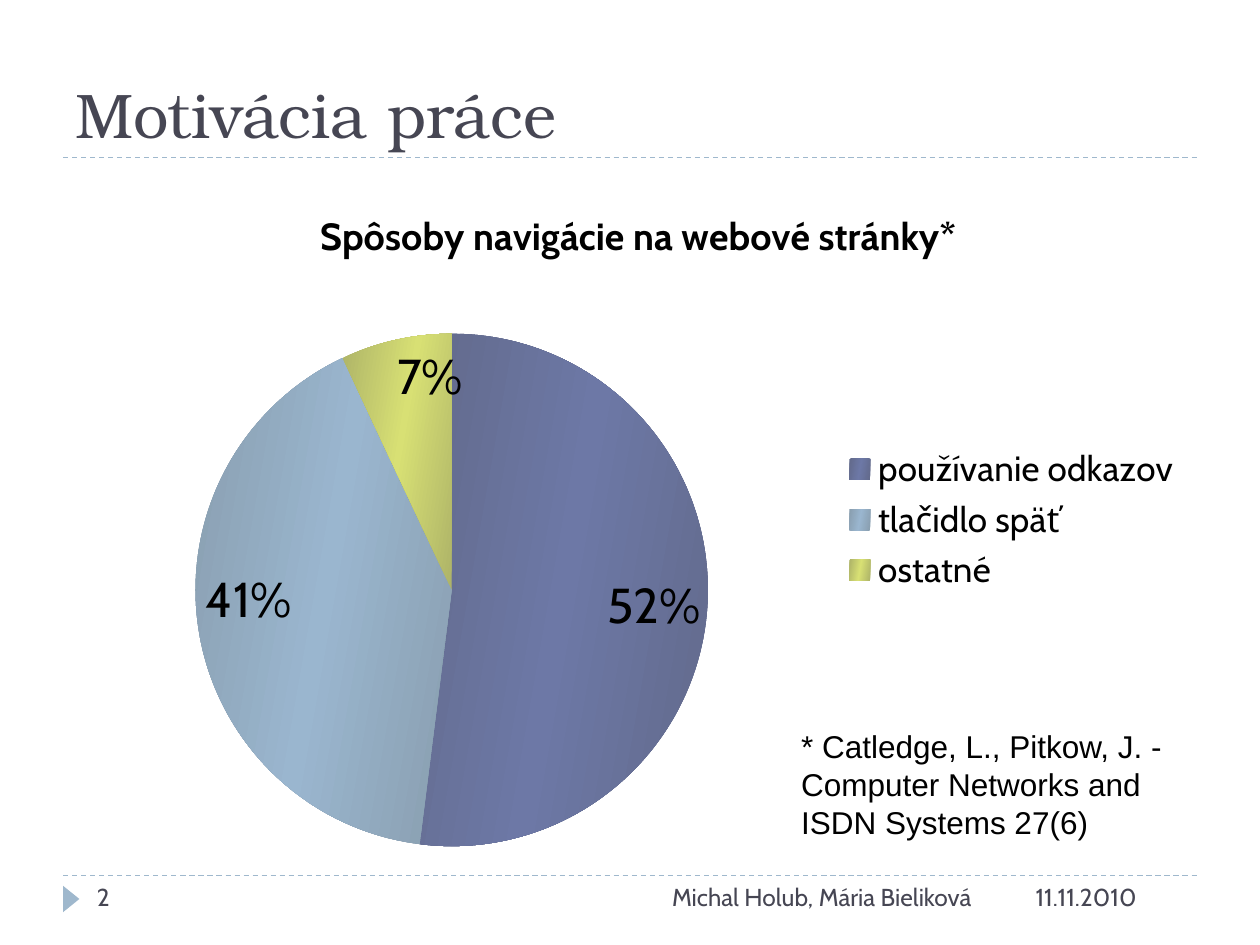
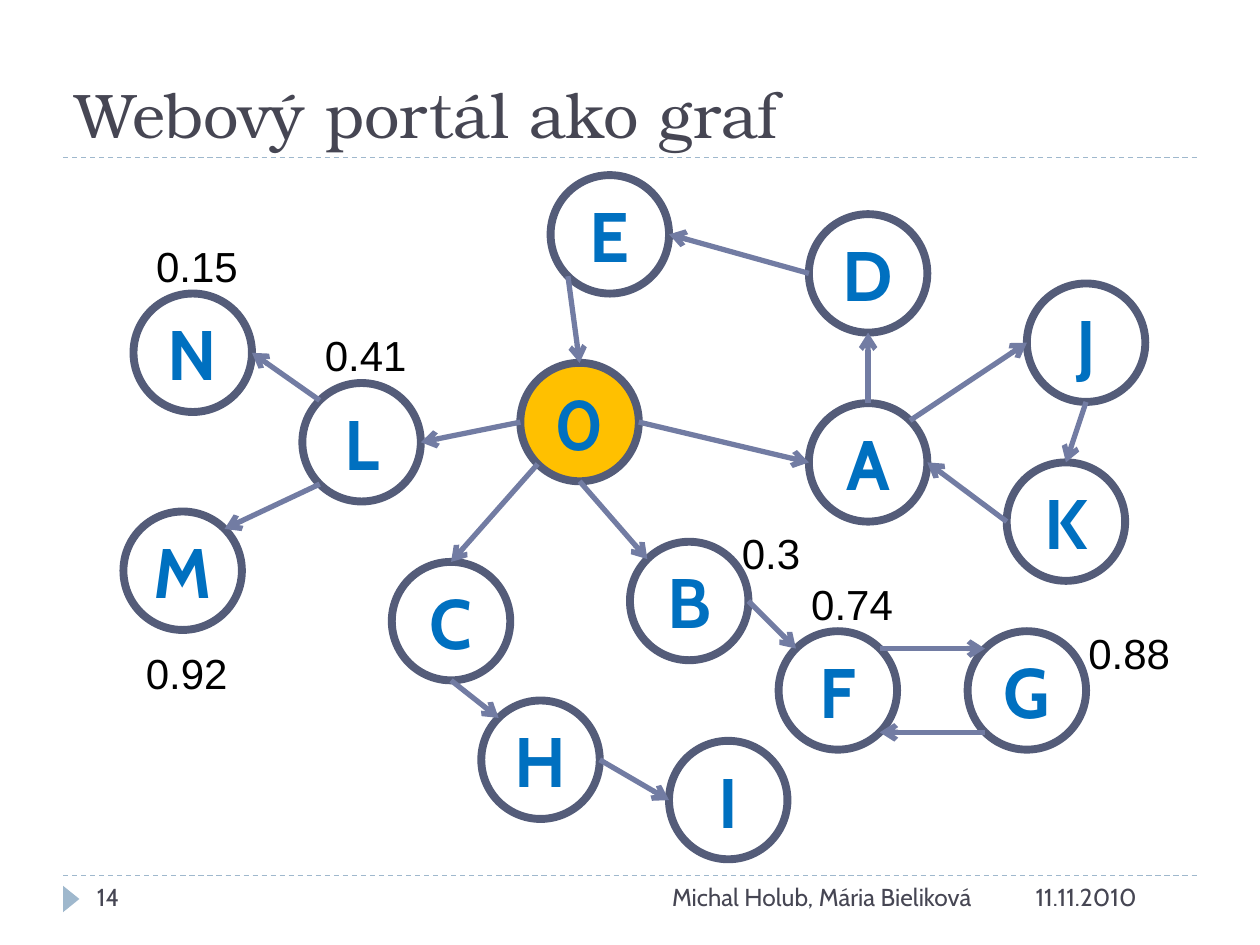
from copy import deepcopy
from math import cos, radians, sin

from pptx import Presentation
from pptx.chart.data import CategoryChartData
from pptx.dml.color import RGBColor
from pptx.enum.chart import XL_CHART_TYPE as ChartType
from pptx.enum.chart import XL_LABEL_POSITION as LabelPosition
from pptx.enum.chart import XL_LEGEND_POSITION as LegendPosition
from pptx.enum.dml import MSO_LINE_DASH_STYLE as Dash
from pptx.enum.shapes import MSO_CONNECTOR as Connector
from pptx.enum.shapes import MSO_SHAPE as Shape
from pptx.enum.text import MSO_ANCHOR as Anchor
from pptx.enum.text import PP_ALIGN as Align
from pptx.oxml import parse_xml
from pptx.oxml.ns import nsdecls, qn
from pptx.oxml.xmlchemy import OxmlElement
from pptx.util import Inches, Pt

WIDTH, HEIGHT = 10, 7.5
MARGIN = 0.5
TITLE_LINE, FOOTER_LINE = 1.25, 6.95

COLORS = {
    "ink": "464653", "rule": "9FB8CD", "text": "000000",
    "ring": "545C79", "edge": "727CA3", "letter": "0070C0", "start": "FFC000",
}
BODY, HEADING, PLAIN = "Cabin", "TeX Gyre Bonum", "Arial"

TITLE_STYLE = {"size": 36, "name": HEADING, "color": "ink"}
FOOTER_STYLE = {"size": 14, "name": BODY, "color": "ink"}
NOTE_STYLE = {"size": 18, "name": PLAIN, "color": "text"}
SCORE_STYLE = {"size": 24, "name": PLAIN, "color": "text"}
LETTER_STYLE = {"size": 40, "name": BODY, "color": "letter", "bold": True}

AUTHORS, DATE = "Michal Holub, Mária Bieliková", "11.11.2010"

PIE_TITLE = "Spôsoby navigácie na webové stránky*"
# category, share, middle colour, edge colour
PIE_SLICES = [
    ("používanie odkazov", 0.52, "6D78A6", "626A8B"),
    ("tlačidlo späť", 0.41, "9AB6CF", "899EAF"),
    ("ostatné", 0.07, "D8E074", "AEB468"),
]
PIE_NOTE = "* Catledge, L., Pitkow, J. - Computer Networks and ISDN Systems 27(6)"

NODE_SIZE = 0.94
NODES = {  # left, top
    "A": (6.42, 3.2), "B": (5, 4.3), "C": (3.11, 4.46), "0": (4.13, 2.88),
    "D": (6.42, 1.7), "E": (4.37, 1.39), "F": (6.18, 5.01), "G": (7.68, 5.01),
    "H": (3.82, 5.56), "I": (5.31, 5.88), "J": (8.15, 2.25), "K": (7.99, 3.67),
    "L": (2.4, 3.04), "M": (0.98, 4.06), "N": (1.06, 2.33),
}
START_NODE = "0"
SITES = {  # degrees clockwise from the right
    "right": 0, "bottom right": 45, "bottom": 90, "bottom left": 135,
    "left": 180, "top left": 225, "top": 270, "top right": 315,
}
EDGES = [
    ("0", "right", "A", "left"), ("A", "top", "D", "bottom"),
    ("D", "left", "E", "right"), ("E", "bottom left", "0", "top"),
    ("0", "bottom", "B", "top left"), ("B", "right", "F", "top left"),
    ("F", "top right", "G", "top left"), ("G", "bottom left", "F", "bottom right"),
    ("0", "bottom left", "C", "top"), ("C", "bottom", "H", "top left"),
    ("H", "right", "I", "left"), ("A", "top right", "J", "left"),
    ("J", "bottom", "K", "top"), ("K", "left", "A", "right"),
    ("0", "left", "L", "right"), ("L", "top left", "N", "right"),
    ("L", "bottom left", "M", "top right"),
]
SCORES = [
    ("0.3", 5.79, 4.14), ("0.74", 6.34, 4.54), ("0.88", 8.54, 4.93),
    ("0.41", 2.48, 2.57), ("0.15", 1.14, 1.86), ("0.92", 1.06, 5.09),
]


def rgb(name):
    return RGBColor.from_string(COLORS.get(name, name))


def inches(*lengths):
    return [Inches(length) for length in lengths]


def style_font(font, style):
    for key, value in style.items():
        if key == "color":
            font.color.rgb = rgb(value)
        else:
            setattr(font, key, Pt(value) if key == "size" else value)


def write(shape, text, style, align=Align.LEFT, anchor=Anchor.TOP):
    frame = shape.text_frame
    frame.word_wrap = True
    frame.vertical_anchor = anchor
    para = frame.paragraphs[0]
    para.alignment = align
    span = para.add_run()
    span.text = text
    style_font(span.font, style)


def add_text(page, place, text, style, **layout):
    write(page.shapes.add_textbox(*inches(*place)), text, style, **layout)


def add_line(page, start, end, color, width):
    line = page.shapes.add_connector(Connector.STRAIGHT, *inches(*start, *end))
    line.line.color.rgb = rgb(color)
    line.line.width = Pt(width)
    line._element.spPr.append(OxmlElement("a:effectLst"))
    return line


def add_page(deck, title, number):
    """Add a blank page with the shared rules, title and footer."""
    page = deck.slides.add_slide(deck.slide_layouts[6])
    for y in (FOOTER_LINE, TITLE_LINE):
        rule = add_line(page, (MARGIN, y), (WIDTH - MARGIN, y), "rule", 0.75)
        rule.line.dash_style = Dash.DASH
    marker = page.shapes.add_shape(
        Shape.ISOSCELES_TRIANGLE, *inches(0.46, 7.07, 0.21, 0.13))
    marker.rotation = 90
    marker.shadow.inherit = False
    marker.fill.solid()
    marker.fill.fore_color.rgb = rgb("rule")
    marker.line.fill.background()
    add_text(page, (MARGIN, 0.17, WIDTH - 2 * MARGIN, 1.08), title,
             TITLE_STYLE, anchor=Anchor.BOTTOM)
    for text, left, width, align in (
        (DATE, 8.12, 1.38, Align.LEFT),
        (str(number), 0.67, 1.91, Align.LEFT),
        (AUTHORS, 2.89, 4.92, Align.RIGHT),
    ):
        add_text(page, (left, FOOTER_LINE, width, 0.4), text, FOOTER_STYLE, align=align)
    return page


def set_layout(parent, index, **shares):
    """Place a chart part by shares of the chart's size."""
    for old in parent.findall(qn("c:layout")):
        parent.remove(old)
    target = '<c:layoutTarget val="inner"/>' if "w" in shares else ""
    modes = '<c:xMode val="edge"/><c:yMode val="edge"/>'
    values = "".join(f'<c:{key} val="{value}"/>' for key, value in shares.items())
    parent.insert(index, parse_xml(
        f'<c:layout {nsdecls("c")}><c:manualLayout>{target}{modes}{values}'
        "</c:manualLayout></c:layout>"))


def shade_slices(chart, series):
    """Give each slice a three-stop gradient that darkens at both edges."""
    fills = []
    for index in range(len(PIE_SLICES)):
        fill = series.points[index].format.fill
        fill.gradient()
        fill.gradient_angle = 350
        fills.append(fill)
    for stops in chart._chartSpace.iter(qn("a:gsLst")):
        stops.append(deepcopy(stops[0]))
    for fill, (_, _, middle, edge) in zip(fills, PIE_SLICES):
        for stop, position, color in zip(
                fill.gradient_stops, (0, 0.5, 1), (edge, middle, edge)):
            stop.position = position
            stop.color.rgb = rgb(color)


def add_pie(page):
    data = CategoryChartData(number_format="0%")
    data.categories = [name for name, *_ in PIE_SLICES]
    data.add_series("Series 1", [share for _, share, *_ in PIE_SLICES])
    chart = page.shapes.add_chart(
        ChartType.PIE, *inches(0.51, 1.39, 8.98, 5.47), data).chart
    chart_style = {"size": 18, "name": BODY, "color": "text"}
    style_font(chart.font, chart_style)

    chart.has_title = True
    para = chart.chart_title.text_frame.paragraphs[0]
    span = para.add_run()
    span.text = PIE_TITLE
    style_font(span.font, {**chart_style, "size": 21.6, "bold": True})
    chart.chart_title.include_in_layout = False
    set_layout(chart.chart_title._element, 1, x=0.22, y=0.04)

    chart.has_legend = True
    chart.legend.position = LegendPosition.RIGHT
    chart.legend.include_in_layout = False
    style_font(chart.legend.font, {**chart_style, "size": 20})

    plot = chart.plots[0]
    plot.vary_by_categories = True
    plot.has_data_labels = True
    labels = plot.data_labels
    for key, value in {
        "show_value": True, "show_percentage": False, "number_format": "0%",
        "number_format_is_linked": False, "position": LabelPosition.INSIDE_END,
    }.items():
        setattr(labels, key, value)
    style_font(labels.font, {**chart_style, "size": 28})
    shade_slices(chart, plot.series[0])
    plot_area = chart._chartSpace.find(".//" + qn("c:plotArea"))
    set_layout(plot_area, 0, x=0.116, y=0.23, w=0.453, h=0.744)


def add_node(page, letter, place):
    node = page.shapes.add_shape(Shape.OVAL, *inches(*place, NODE_SIZE, NODE_SIZE))
    node.shadow.inherit = False
    if letter == START_NODE:
        node.fill.solid()
        node.fill.fore_color.rgb = rgb("start")
    else:
        node.fill.background()
    node.line.color.rgb = rgb("ring")
    node.line.width = Pt(4.5)
    for side in ("left", "top", "right", "bottom"):
        setattr(node.text_frame, f"margin_{side}", 0)
    write(node, letter, LETTER_STYLE, align=Align.CENTER, anchor=Anchor.MIDDLE)


def site_point(letter, site):
    """Return the point on a node's ring at the named site."""
    left, top = NODES[letter]
    angle, radius = radians(SITES[site]), NODE_SIZE / 2
    return left + radius * (1 + cos(angle)), top + radius * (1 + sin(angle))


def add_edge(page, source, source_site, target, target_site):
    edge = add_line(page, site_point(source, source_site),
                    site_point(target, target_site), "edge", 3)
    head = OxmlElement("a:tailEnd")
    head.set("type", "arrow")
    edge.line._get_or_add_ln().append(head)


def build_motivation(deck):
    page = add_page(deck, "Motivácia práce", 2)
    add_pie(page)
    add_text(page, (6.26, 5.72, 3.31, 1.01), PIE_NOTE, NOTE_STYLE)


def build_graph(deck):
    page = add_page(deck, "Webový portál ako graf", 14)
    for letter, place in NODES.items():
        add_node(page, letter, place)
    for edge in EDGES:
        add_edge(page, *edge)
    for score, left, top in SCORES:
        add_text(page, (left, top, 0.87, 0.5), score, SCORE_STYLE)


def main():
    deck = Presentation()
    deck.slide_width, deck.slide_height = inches(WIDTH, HEIGHT)
    build_motivation(deck)
    build_graph(deck)
    deck.save("out.pptx")


if __name__ == "__main__":
    main()
